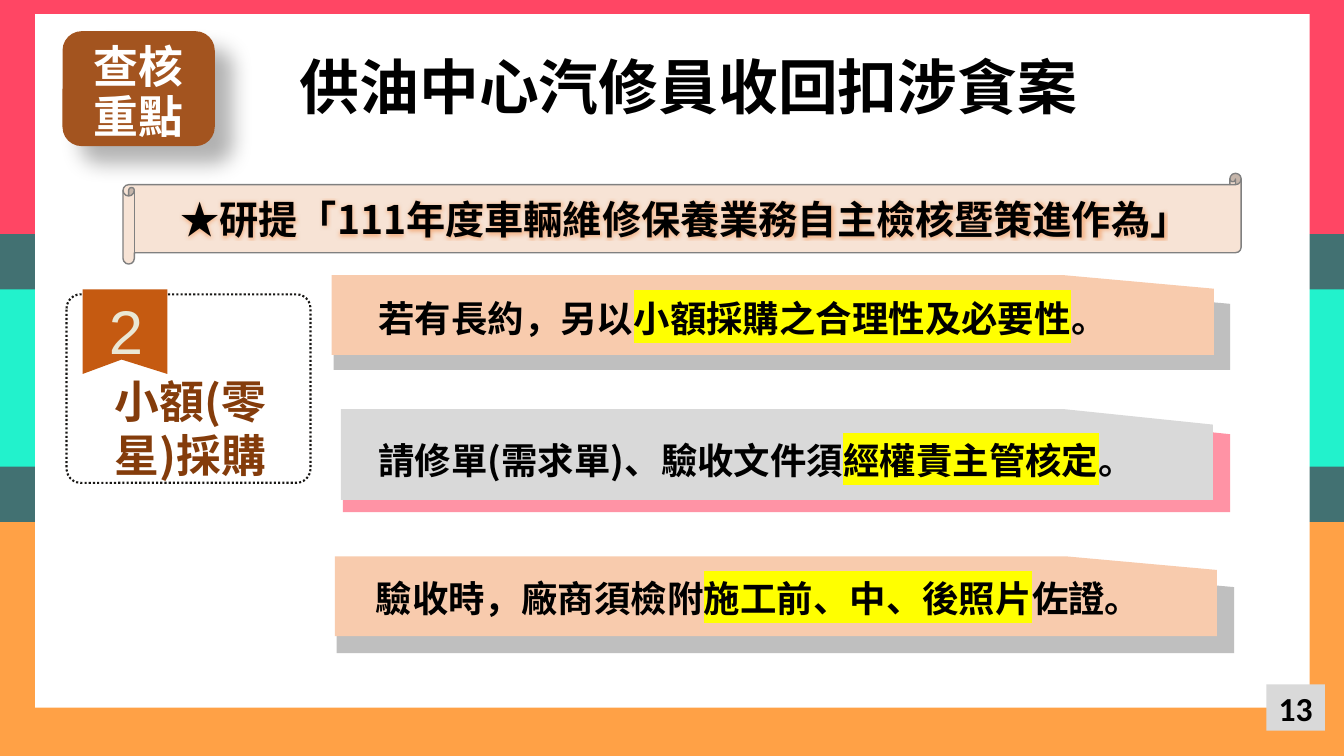
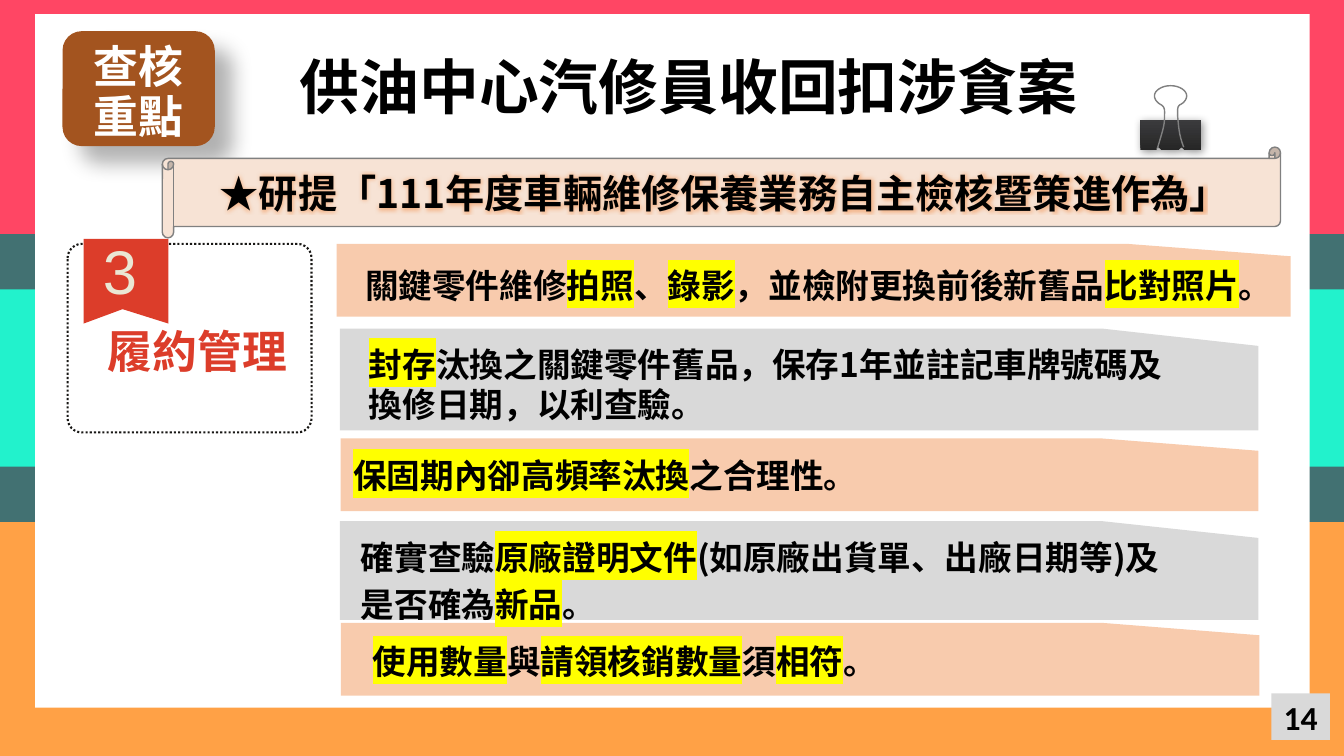
import lxml.etree
import pptx
import pptx.dml.color
import pptx.enum.dml
import pptx.enum.shapes
import pptx.enum.text
import pptx.oxml
import pptx.oxml.ns
import pptx.util

Inches = pptx.util.Inches
SHAPE = pptx.enum.shapes.MSO_SHAPE
ALIGN = pptx.enum.text.PP_ALIGN
ANCHOR = pptx.enum.text.MSO_ANCHOR
qn = pptx.oxml.ns.qn

THEME = {
    "teal": "427172", "mint": "22F2CC", "red": "FF4664", "orange": "FFA146",
    "white": "FFFFFF", "black": "000000", "gray": "D9D9D9", "peach": "F8CBAD",
    "shade": "BFBFBF", "pink": "FF93A5", "brown": "A3541F", "scroll": "F7E3D5",
    "outline": "808080", "dots": "181715", "digit": "EAE7D4", "marker": "FFFF00",
    "glow": "F4B183", "rust": "C55A11", "umber": "843C0B", "crimson": "DC3D2A",
    "clip_dark": "262626", "clip_light": "3B3B3D",
    "font": "Noto Sans CJK SC", "digit_font": "Arial", "page_font": "Calibri",
    "title": 42.7, "number": 44, "label": 32, "banner": 28, "page": 24,
}
PLATE = [(0, 0), (0.83, 0), (1, 0.17), (1, 1), (0, 1)]
RIBBON = [(0, 0), (1, 0), (1, 1), (0.46, 0.83), (0, 1)]
CLIP = [(0, 0), (1, 0), (1, 1), (0.73, 1), (0.68, 0.9), (0.63, 1),
        (0.35, 1), (0.3, 0.9), (0.27, 0.9), (0.27, 1), (0, 1)]
WIRE = [(11.48, 1.47), (11.53, 1.3), (11.55, 1.25), (11.55, 1.16),
        (11.55, 1.09), (11.56, 1.06), (11.5, 1.03),
        (11.47, 1.01), (11.45, 0.98), (11.45, 0.95),
        (11.45, 0.9), (11.52, 0.85), (11.61, 0.85),
        (11.7, 0.85), (11.77, 0.9), (11.77, 0.95),
        (11.77, 0.98), (11.75, 1.01), (11.72, 1.03),
        (11.67, 1.05), (11.68, 1.09), (11.68, 1.15),
        (11.69, 1.25), (11.69, 1.33), (11.74, 1.46)]
ROOMY = (0.13, 0.07)


def add_block(page, kind, box, fill=None, line=None, width=1, shadow=None):
    left, top, wide, high = box
    if isinstance(kind, list):
        points = [(Inches(left + x * wide), Inches(top + y * high)) for x, y in kind]
        builder = page.shapes.build_freeform(*points[0], scale=1.0)
        builder.add_line_segments(points[1:], close=fill is not None)
        shape = builder.convert_to_shape()
    else:
        shape = page.shapes.add_shape(kind, *map(Inches, box))
    shape.shadow.inherit = False
    if fill:
        shape.fill.solid()
        shape.fill.fore_color.rgb = pptx.dml.color.RGBColor.from_string(THEME[fill])
    else:
        shape.fill.background()
    if line:
        shape.line.color.rgb = pptx.dml.color.RGBColor.from_string(THEME[line])
        shape.line.width = pptx.util.Pt(width)
    else:
        shape.line.fill.background()
    if shadow:
        alpha, blur, distance = shadow
        effects = shape.fill._xPr.find(qn("a:effectLst"))
        cast = lxml.etree.SubElement(
            effects, qn("a:outerShdw"), blurRad=str(pptx.util.Pt(blur)),
            dist=str(pptx.util.Pt(distance)), dir="2700000", algn="tl", rotWithShape="0")
        color = lxml.etree.SubElement(cast, qn("a:srgbClr"), val=THEME["black"])
        lxml.etree.SubElement(color, qn("a:alpha"), val=str(alpha * 1000))
    return shape


def add_text(shape, text, size, color="black", font="font", bold=True, align=ALIGN.CENTER,
             anchor=ANCHOR.TOP, spacing=None, inset=(0.1, 0.05), glow=False):
    frame = shape.text_frame
    frame.word_wrap = True
    frame.vertical_anchor = anchor
    frame.margin_left = frame.margin_right = Inches(inset[0])
    frame.margin_top = frame.margin_bottom = Inches(inset[1])
    para = frame.paragraphs[0]
    para.alignment = align
    if spacing:
        para.line_spacing = pptx.util.Pt(spacing)
    for index, words in enumerate(text.split("|")):
        if not words:
            continue
        span = para.add_run()
        span.text = words
        span.font.size = pptx.util.Pt(size)
        span.font.bold = bold
        span.font.color.rgb = pptx.dml.color.RGBColor.from_string(THEME[color])
        span.font.name = THEME[font]
        latin = span.font._element.find(qn("a:latin"))
        east_asian = lxml.etree.Element(qn("a:ea"), typeface=THEME[font])
        latin.addnext(east_asian)
        if glow:
            effects = lxml.etree.Element(qn("a:effectLst"))
            halo = lxml.etree.SubElement(effects, qn("a:glow"), rad=str(pptx.util.Pt(5)))
            lxml.etree.SubElement(halo, qn("a:srgbClr"), val=THEME["glow"])
            latin.addprevious(effects)
        if index % 2:
            marker = lxml.etree.Element(qn("a:highlight"))
            lxml.etree.SubElement(marker, qn("a:srgbClr"), val=THEME["marker"])
            latin.addprevious(marker)


PAGES = [
    {
        "page_number": "13", "page_at": (12.56, 6.79), "banner_at": (1.22, 1.72),
        "topic_at": (0.66, 2.92), "number": "2", "number_box": (0.95, 2.84, 0.58, 0.76),
        "ribbon": "rust", "label": "小額(零星)採購", "label_color": "umber",
        "label_box": (0.77, 3.64, 2.24, 1.21), "clip": False, "size": 26,
        "plates": [
            ((3.4, 4.15, 8.8, 0.93), "pink"), ((3.38, 4.06, 8.65, 0.9), "gray"),
            ((3.34, 5.69, 8.9, 0.79), "shade"), ((3.32, 5.52, 8.75, 0.79), "peach"),
            ((3.31, 2.88, 8.89, 0.79), "shade"), ((3.29, 2.73, 8.75, 0.79), "peach"),
        ],
        "points": [
            ((3.39, 2.87, 7.96, 0.57), "若有長約，另以|小額採購之合理性及必要性|。", ALIGN.CENTER, None),
            ((3.4, 4.28, 8.21, 0.57), "請修單(需求單)、驗收文件須|經權責主管核定|。", ALIGN.CENTER, None),
            ((3.36, 5.65, 8.33, 0.57), "驗收時，廠商須檢附|施工前、中、後照片|佐證。", ALIGN.CENTER, None),
        ],
    },
    {
        "page_number": "14", "page_at": (12.61, 6.88), "banner_at": (1.61, 1.46),
        "topic_at": (0.67, 2.42), "number": "3", "number_box": (0.89, 2.24, 0.71, 0.93),
        "ribbon": "crimson", "label": "履約管理", "label_color": "crimson",
        "label_box": (0.83, 3.14, 2.26, 0.72), "clip": True, "size": 24,
        "plates": [
            ((3.34, 2.42, 9.46, 0.72), "peach"), ((3.37, 3.26, 9.11, 1.01), "gray"),
            ((3.38, 4.35, 9.1, 0.72), "peach"), ((3.37, 5.17, 9.11, 0.98), "gray"),
            ((3.38, 6.18, 9.11, 0.72), "peach"),
        ],
        "points": [
            ((3.4, 2.56, 9.11, 0.54),
             "關鍵零件維修|拍照|、|錄影|，並檢附更換前後新舊品|比對照片|。", ALIGN.CENTER, None),
            ((3.53, 3.34, 8.23, 0.94),
             "|封存|汰換之關鍵零件舊品，保存1年並註記車牌號碼及換修日期，以利查驗。", ALIGN.LEFT, None),
            ((3.37, 4.44, 5.27, 0.54), "|保固期內卻高頻率汰換|之合理性。", ALIGN.CENTER, None),
            ((3.45, 5.18, 8.28, 1.05),
             "確實查驗|原廠證明文件|(如原廠出貨單、出廠日期等)及是否確為|新品|。", ALIGN.LEFT, 34),
            ((3.41, 6.29, 5.24, 0.54),
             "|使用數量|與|請領核銷數量|須|相符|。", ALIGN.CENTER, None),
        ],
    },
]

deck = pptx.Presentation()
deck.slide_width = Inches(13.33)
deck.slide_height = Inches(7.5)

for content in PAGES:
    page = deck.slides.add_slide(deck.slide_layouts[6])

    for box, fill in [
        ((0, 0, 13.33, 7.5), "teal"), ((0, 2.87, 13.33, 1.76), "mint"),
        ((0, 0, 13.33, 2.32), "red"), ((0, 5.18, 13.33, 2.32), "orange"),
        ((0.35, 0.14, 12.64, 6.88), "white"),
    ]:
        add_block(page, SHAPE.RECTANGLE, box, fill)

    page_box = add_block(page, SHAPE.RECTANGLE, (*content["page_at"], 0.58, 0.46), "gray")
    add_text(page_box, content["page_number"], THEME["page"], font="page_font",
             anchor=ANCHOR.MIDDLE)

    if content["clip"]:
        body = add_block(page, CLIP, (11.31, 1.19, 0.6, 0.3), "clip_dark", shadow=(40, 6, 2))
        body.fill.gradient()
        body.fill.gradient_angle = 90
        for stop, color in zip(body.fill.gradient_stops, ("clip_dark", "clip_light")):
            stop.color.rgb = pptx.dml.color.RGBColor.from_string(THEME[color])
        curve = WIRE[:1]
        for start in range(0, len(WIRE) - 1, 3):
            for step in range(1, 9):
                t = step / 8
                weights = ((1 - t) ** 3, 3 * t * (1 - t) ** 2, 3 * t * t * (1 - t), t ** 3)
                corners = WIRE[start:start + 4]
                curve.append(tuple(sum(w * corner[axis] for w, corner in zip(weights, corners))
                                   for axis in (0, 1)))
        add_block(page, curve, (0, 0, 1, 1), line="outline")

    badge = add_block(page, SHAPE.ROUNDED_RECTANGLE, (0.62, 0.31, 1.51, 1.14), "brown",
                      shadow=(30, 15, 18))
    add_text(badge, "查核重點", THEME["label"], "white", spacing=36)

    banner = add_block(page, SHAPE.HORIZONTAL_SCROLL, (*content["banner_at"], 11.09, 0.9),
                       "scroll", "outline")
    add_text(banner, "★研提「111年度車輛維修保養業務自主檢核暨策進作為」", THEME["banner"],
             anchor=ANCHOR.MIDDLE, glow=True)

    for box, fill in content["plates"]:
        add_block(page, PLATE, box, fill)

    left, top = content["topic_at"]
    topic = add_block(page, SHAPE.ROUNDED_RECTANGLE, (left, top, 2.42, 1.87),
                      line="dots", width=1.5)
    topic.adjustments[0] = 0.075
    topic.line.dash_style = pptx.enum.dml.MSO_LINE.ROUND_DOT
    add_block(page, RIBBON, (left + 0.16, top - 0.05, 0.84, 0.84), content["ribbon"])

    number = page.shapes.add_textbox(*map(Inches, content["number_box"]))
    add_text(number, content["number"], THEME["number"], "digit", "digit_font", bold=False,
             align=ALIGN.LEFT, inset=ROOMY)
    label = page.shapes.add_textbox(*map(Inches, content["label_box"]))
    add_text(label, content["label"], THEME["label"], content["label_color"], inset=ROOMY)

    for box, text, align, spacing in content["points"]:
        point = page.shapes.add_textbox(*map(Inches, box))
        add_text(point, text, content["size"], align=align, spacing=spacing, inset=ROOMY)

    title = page.shapes.add_textbox(*map(Inches, (2.49, 0.8, 8.68, 0.52)))
    add_text(title, "供油中心汽修員收回扣涉貪案", THEME["title"], spacing=20, inset=(0.13, 0.13))

deck.save("out.pptx")
